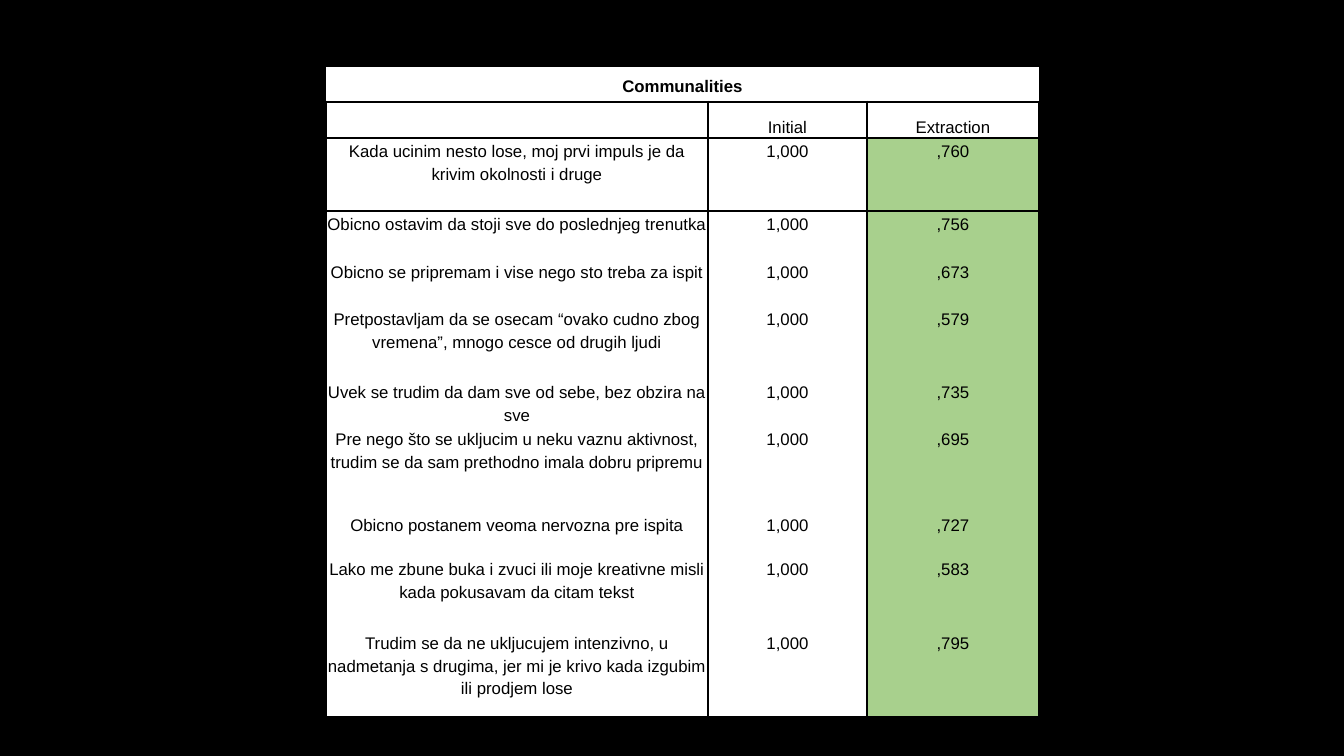
from lxml import etree
from pptx import Presentation
from pptx.dml.color import RGBColor
from pptx.enum.text import MSO_ANCHOR, PP_ALIGN
from pptx.oxml.ns import qn
from pptx.util import Pt

PX = 914400 / 100.8
BLACK = RGBColor(0x00, 0x00, 0x00)
WHITE = RGBColor(0xFF, 0xFF, 0xFF)
GREEN = RGBColor(0xA8, 0xD0, 0x8D)
CENTER = PP_ALIGN.CENTER
TOP, MIDDLE, BOTTOM = MSO_ANCHOR.TOP, MSO_ANCHOR.MIDDLE, MSO_ANCHOR.BOTTOM
NO_STYLE_NO_GRID = "{2D5ABB26-0587-4C30-8999-92F81FD0307C}"
THICK, THIN = 2.25, 1

COLUMN_WIDTHS = [382, 159, 172]
HEADER_HEIGHTS = [35, 36]
ITEMS = [
    ("Kada ucinim nesto lose, moj prvi impuls je da krivim okolnosti i druge", ",760", 73),
    ("Obicno ostavim da stoji sve do poslednjeg trenutka", ",756", 48),
    ("Obicno se pripremam i vise nego sto treba za ispit", ",673", 47),
    ("Pretpostavljam da se osecam “ovako cudno zbog vremena”, mnogo cesce od drugih ljudi",
     ",579", 73),
    ("Uvek se trudim da dam sve od sebe, bez obzira na sve", ",735", 47),
    ("Pre nego što se ukljucim u neku vaznu aktivnost, trudim se da sam prethodno imala "
     "dobru pripremu", ",695", 86),
    ("Obicno postanem veoma nervozna pre ispita", ",727", 44),
    ("Lako me zbune buka i zvuci ili moje kreativne misli kada pokusavam da citam tekst",
     ",583", 74),
    ("Trudim se da ne ukljucujem intenzivno, u nadmetanja s drugima, jer mi je krivo kada "
     "izgubim ili prodjem lose", ",795", 86),
]


def px(length):
    return round(length * PX)


def add_borders(cell, widths):
    """Draw black borders; widths maps L, R, T, B (in that order) to points."""
    properties = cell._tc.get_or_add_tcPr()
    for side, width in widths.items():
        line = etree.SubElement(properties, qn(f"a:ln{side}"), w=str(Pt(width)))
        fill = etree.SubElement(line, qn("a:solidFill"))
        etree.SubElement(fill, qn("a:srgbClr"), val=str(BLACK))


presentation = Presentation()
presentation.slide_width = px(1344)
presentation.slide_height = px(756)
slide = presentation.slides.add_slide(presentation.slide_layouts[6])
slide.background.fill.solid()
slide.background.fill.fore_color.rgb = BLACK

rows = [("Communalities", "", ""), ("", "Initial", "Extraction")]
rows += [(statement, "1,000", extraction) for statement, extraction, _ in ITEMS]
row_heights = HEADER_HEIGHTS + [height for _, _, height in ITEMS]

table_frame = slide.shapes.add_table(
    len(rows), len(COLUMN_WIDTHS), px(326), px(67), px(sum(COLUMN_WIDTHS)), px(sum(row_heights)))
table = table_frame.table
table.first_row = False
table.horz_banding = False
table._tbl.tblPr.find(qn("a:tableStyleId")).text = NO_STYLE_NO_GRID
for column, width in zip(table.columns, COLUMN_WIDTHS):
    column.width = px(width)
for row, height in zip(table.rows, row_heights):
    row.height = px(height)
table.cell(0, 0).merge(table.cell(0, 2))

column_edges = [THICK, THICK, THIN, THICK]
for row_index, texts in enumerate(rows):
    for column_index, text in enumerate(texts):
        cell = table.cell(row_index, column_index)
        borders = {}
        if row_index > 0:
            borders["L"] = column_edges[column_index]
            borders["R"] = column_edges[column_index + 1]
        if row_index in (1, 2):
            borders["T"] = THICK
        if row_index in (0, 1):
            borders["B"] = THICK
        add_borders(cell, borders)
        cell.fill.solid()
        cell.fill.fore_color.rgb = GREEN if row_index > 1 and column_index == 2 else WHITE

        cell.margin_left = cell.margin_right = cell.margin_top = cell.margin_bottom = px(1)
        cell.vertical_anchor = {0: MIDDLE, 1: BOTTOM}.get(row_index, TOP)
        cell.text = text
        paragraph = cell.text_frame.paragraphs[0]
        paragraph.alignment = CENTER
        paragraph.line_spacing = Pt(16)
        paragraph.space_after = Pt(8)
        paragraph.font.name = "Arial"
        paragraph.font.size = Pt(12)
        paragraph.font.bold = row_index == 0
        paragraph.font.color.rgb = BLACK

presentation.save("out.pptx")
